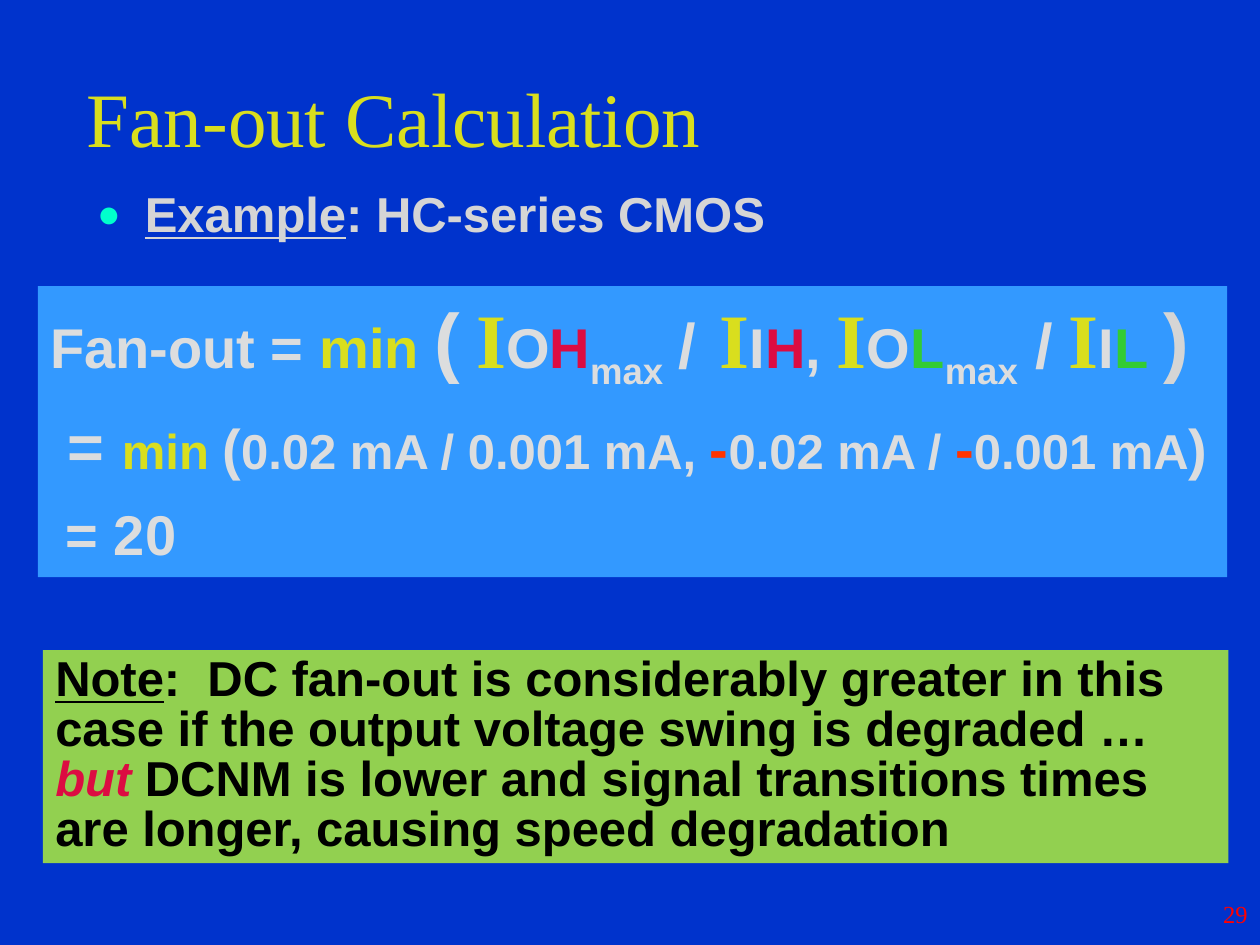
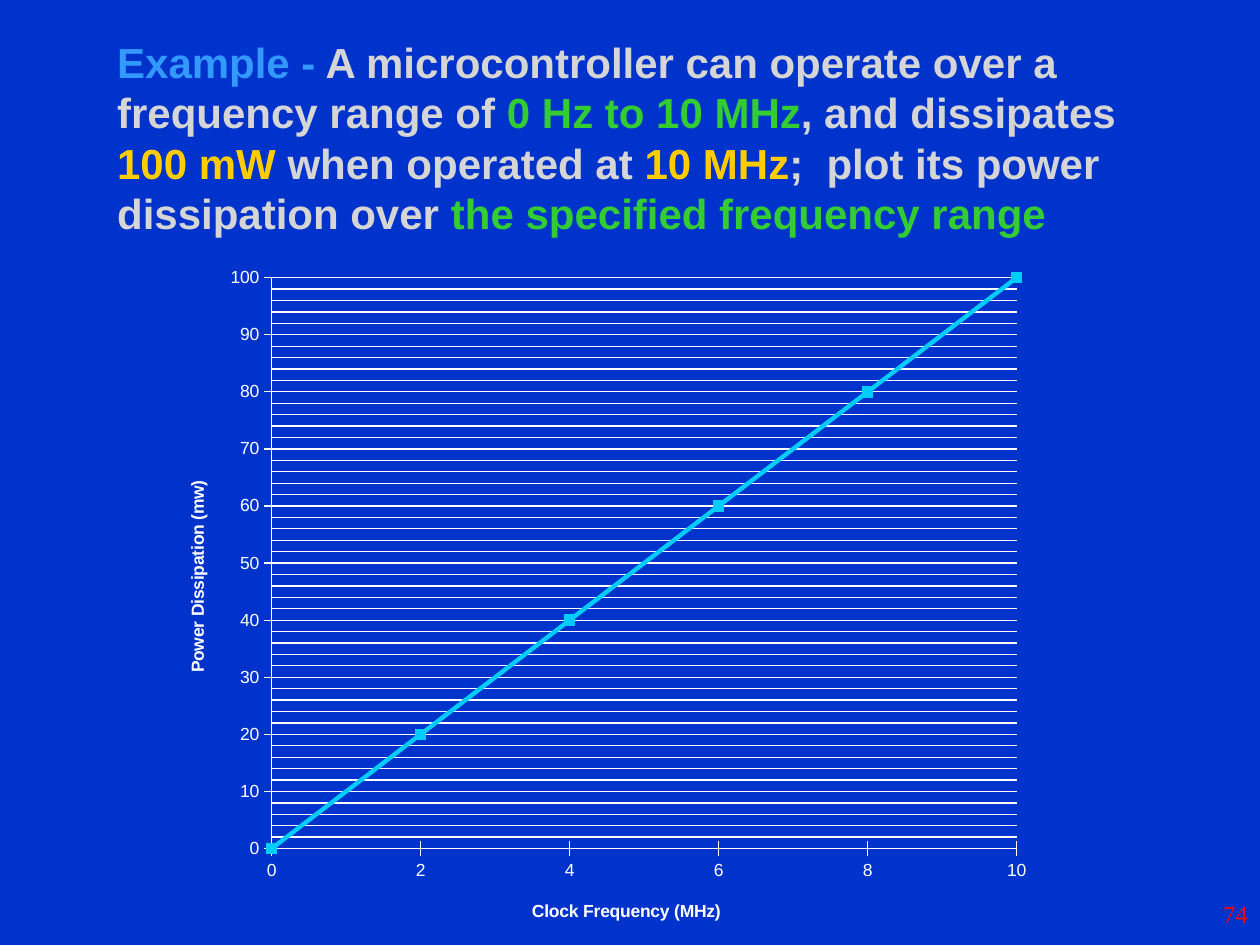
import copy
import pptx
import pptx.chart.data
import pptx.dml.color
import pptx.enum.chart
import pptx.enum.shapes
import pptx.enum.text
import pptx.util
from lxml import etree
from pptx.oxml.ns import qn
from pptx.util import Inches, Pt

COLOURS = {
    "background": "0033CC", "title": "D9DE1E", "body": "D5D5D5", "formula": "DCDDDE",
    "formula_box": "3399FF", "note_box": "92D050", "note": "000000", "bullet": "00FFCC",
    "high": "DC0C42", "low": "33CC33", "minus": "FF3300", "amount": "FFCC00",
    "number": "FF0000", "axis": "FFFFFF", "power": "00CCFF",
}
SERIF = "Times New Roman"
SANS = "Arial"


def rgb(colour):
    return pptx.dml.color.RGBColor.from_string(COLOURS[colour])


def add_text(paragraph, text, size=28, colour="body", font=SANS, bold=True,
             italic=False, underline=False, baseline=0):
    run = paragraph.add_run()
    run.text = text
    style = run.font
    style.size, style.name = Pt(size), font
    style.bold, style.italic, style.underline = bold, italic, underline
    style.color.rgb = rgb(colour)
    if baseline:
        style._element.set("baseline", str(baseline * 1000))


def space_paragraph(paragraph, before, lines=1.0):
    paragraph.line_spacing = lines
    paragraph.space_before = Pt(0)
    spacing = paragraph._p.pPr.find(qn("a:spcBef"))
    spacing.remove(spacing[0])
    etree.SubElement(spacing, qn("a:spcPct"), val=str(before * 1000))


def set_bullet(paragraph, hanging, char=None):
    properties = paragraph._p.get_or_add_pPr()
    properties.set("marL", str(Inches(0.38)))
    properties.set("indent", str(Inches(-0.38 if hanging else 0)))
    if char is None:
        etree.SubElement(properties, qn("a:buNone"))
        return
    colour = etree.SubElement(properties, qn("a:buClr"))
    etree.SubElement(colour, qn("a:srgbClr"), val=COLOURS["bullet"])
    etree.SubElement(properties, qn("a:buSzPct"), val="80000")
    etree.SubElement(properties, qn("a:buFont"), typeface=SANS)
    etree.SubElement(properties, qn("a:buChar"), char=char)


def place(shape, box, anchor):
    shape.left, shape.top, shape.width, shape.height = map(Inches, box)
    frame = shape.text_frame
    frame.word_wrap = True
    frame.auto_size = pptx.enum.text.MSO_AUTO_SIZE.NONE
    frame.vertical_anchor = anchor
    return frame.paragraphs[0]


def add_title(slide, box, text):
    heading = place(slide.shapes.title, box, pptx.enum.text.MSO_ANCHOR.MIDDLE)
    heading.alignment = pptx.enum.text.PP_ALIGN.LEFT
    add_text(heading, text, size=44, colour="title", font=SERIF, bold=False)


def start_body(slide, box):
    return place(slide.placeholders[1], box, pptx.enum.text.MSO_ANCHOR.TOP)


def add_slide_number(slide, number):
    footer = place(slide.shapes.add_textbox(0, 0, 0, 0), (7.92, 7, 2.08, 0.5),
                   pptx.enum.text.MSO_ANCHOR.MIDDLE)
    footer.alignment = pptx.enum.text.PP_ALIGN.RIGHT
    add_text(footer, str(number), size=14, colour="number", font=SERIF, bold=False)


def add_panel(slide, box, colour, line_count):
    panel = slide.shapes.add_shape(pptx.enum.shapes.MSO_SHAPE.RECTANGLE, 0, 0, 0, 0)
    panel.shadow.inherit = False
    panel.fill.solid()
    panel.fill.fore_color.rgb = rgb(colour)
    panel.line.fill.background()
    place(panel, box, pptx.enum.text.MSO_ANCHOR.MIDDLE)
    frame = panel.text_frame
    lines = [frame.paragraphs[0]] + [frame.add_paragraph() for _ in range(line_count - 1)]
    for line in lines:
        line.alignment = pptx.enum.text.PP_ALIGN.LEFT
        space_paragraph(line, 50, 0.85)
    return lines


def add_current(line, side, level):
    add_text(line, "I", size=44, colour="title", font=SERIF)
    add_text(line, side, size=32, colour="formula")
    add_text(line, level, size=32, colour="high" if level == "H" else "low")
    if side == "O":
        add_text(line, "max", size=36, colour="formula", baseline=-25)


def add_formula(slide, box):
    ratio, values, result = add_panel(slide, box, "formula_box", 3)

    def plain(line, text, size, colour="formula"):
        add_text(line, text, size=size, colour=colour)

    plain(ratio, "Fan-out = ", 32)
    plain(ratio, "min ", 32, "title")
    plain(ratio, "(", 44)
    plain(ratio, " ", 32)
    add_current(ratio, "O", "H")
    plain(ratio, " ", 32)
    plain(ratio, "/", 36)
    plain(ratio, " ", 48)
    add_current(ratio, "I", "H")
    plain(ratio, ", ", 32)
    add_current(ratio, "O", "L")
    plain(ratio, " /", 36)
    plain(ratio, " ", 32)
    add_current(ratio, "I", "L")
    plain(ratio, " ", 32)
    plain(ratio, ")", 44, "body")

    plain(values, " = ", 36)
    plain(values, "min ", 28, "title")
    plain(values, "(", 32)
    plain(values, "0.02 mA / 0.001 mA, ", 28)
    for amount in ("0.02 mA / ", "0.001 mA"):
        plain(values, "-", 32, "minus")
        plain(values, amount, 28)
    plain(values, ")", 32)

    plain(result, " = 20", 32)


def add_note(slide, box):
    note, = add_panel(slide, box, "note_box", 1)
    add_text(note, "Note", colour="note", underline=True)
    add_text(note, ":  DC fan-out is considerably greater in this case if the output "
                   "voltage swing is degraded … ", colour="note")
    add_text(note, "but", colour="high", italic=True)
    add_text(note, " DCNM is lower and signal transitions times are longer, "
                   "causing speed degradation", colour="note")


def set_layout(element, inner=False, **fractions):
    layout = element.find(qn("c:layout"))
    if layout is None:
        layout = etree.Element(qn("c:layout"))
        element.insert(0 if element.find(qn("c:tx")) is None else 1, layout)
    manual = etree.SubElement(layout, qn("c:manualLayout"))
    if inner:
        etree.SubElement(manual, qn("c:layoutTarget"), val="inner")
    for mode in ("xMode", "yMode"):
        etree.SubElement(manual, qn("c:" + mode), val="edge")
    for side, fraction in fractions.items():
        etree.SubElement(manual, qn("c:" + side), val=str(fraction))


def format_axis(axis, title, x, y):
    axis.major_tick_mark = pptx.enum.chart.XL_TICK_MARK.CROSS
    axis.format.line.color.rgb = rgb("axis")
    axis.format.line.width = Pt(0.75)
    caption = axis.axis_title.text_frame.paragraphs[0]
    add_text(caption, title, size=10, colour="axis")
    set_layout(axis.axis_title._element, x=x, y=y)


def add_gridlines(axis):
    axis.has_major_gridlines = axis.has_minor_gridlines = True
    line = axis.major_gridlines.format.line
    line.color.rgb = rgb("axis")
    line.width = Pt(0.75)
    major, minor = (axis._element.find(qn(f"c:{level}Gridlines")) for level in ("major", "minor"))
    minor.append(copy.deepcopy(major[0]))


def add_power_chart(slide, box):
    data = pptx.chart.data.CategoryChartData()
    frequencies = range(0, 11, 2)
    data.categories = [str(frequency) for frequency in frequencies]
    data.add_series("Series 1", [10 * frequency for frequency in frequencies])
    chart = slide.shapes.add_chart(pptx.enum.chart.XL_CHART_TYPE.LINE_MARKERS,
                                   *map(Inches, box), data).chart
    chart.has_title = chart.has_legend = False
    chart.font.size, chart.font.name = Pt(10), SANS
    chart.font.color.rgb = rgb("axis")
    plot_area = chart._chartSpace.find(qn("c:chart")).find(qn("c:plotArea"))
    set_layout(plot_area, inner=True, x=0.13, y=0.03, w=0.84, h=0.83)

    format_axis(chart.category_axis, "Clock Frequency (MHz)", 0.42, 0.93)
    power_axis = chart.value_axis
    format_axis(power_axis, "Power Dissipation (mw)", 0.03, 0.32)
    power_axis.minimum_scale, power_axis.maximum_scale = 0, 100
    power_axis.major_unit, power_axis.minor_unit = 10, 2
    add_gridlines(power_axis)
    crossing = power_axis._element.find(qn("c:crossBetween"))
    if crossing is None:
        crossing = etree.Element(qn("c:crossBetween"))
        power_axis._element.find(qn("c:crosses")).addnext(crossing)
    crossing.set("val", "midCat")

    chart.plots[0].vary_by_categories = False
    power = chart.plots[0].series[0]
    power.smooth = False
    power.format.line.color.rgb = rgb("power")
    power.format.line.width = Pt(2.5)
    power.marker.style = pptx.enum.chart.XL_MARKER_STYLE.SQUARE
    power.marker.size = 6
    power.marker.format.fill.solid()
    power.marker.format.fill.fore_color.rgb = rgb("power")
    power.marker.format.line.color.rgb = rgb("power")


def build_fan_out(slide):
    add_title(slide, (0.59, 0.3, 8.83, 1.25), "Fan-out Calculation")
    example = start_body(slide, (0.67, 1.46, 8.83, 5.33))
    space_paragraph(example, 20, 0.9)
    set_bullet(example, True, "●")
    add_text(example, "Example", underline=True)
    add_text(example, ": HC-series CMOS")
    add_formula(slide, (0.3, 2.27, 9.44, 2.31))
    add_note(slide, (0.34, 5.16, 9.41, 1.69))
    add_slide_number(slide, 29)


def build_power(slide):
    title = slide.shapes.title._element
    title.getparent().remove(title)
    example = start_body(slide, (0.45, 0.24, 9.09, 5.33))
    space_paragraph(example, 20)
    set_bullet(example, False)
    for text, colour in (
        ("Example -", "formula_box"),
        (" A microcontroller can operate over a frequency range of ", "body"),
        ("0 Hz to 10 MHz", "low"),
        (", and dissipates ", "body"),
        ("100 mW", "amount"),
        (" when operated at ", "body"),
        ("10 MHz", "amount"),
        (";  plot its power dissipation over ", "body"),
        ("the specified frequency range", "low"),
    ):
        add_text(example, text, size=24, colour=colour)
    add_slide_number(slide, 74)
    add_power_chart(slide, (1.24, 2.04, 7.04, 5.46))


def main():
    deck = pptx.Presentation()
    deck.slide_width, deck.slide_height = Inches(10), Inches(7.5)
    backdrop = deck.slide_master.background.fill
    backdrop.solid()
    backdrop.fore_color.rgb = rgb("background")
    for build in (build_fan_out, build_power):
        build(deck.slides.add_slide(deck.slide_layouts[1]))
    deck.save("out.pptx")


if __name__ == "__main__":
    main()
